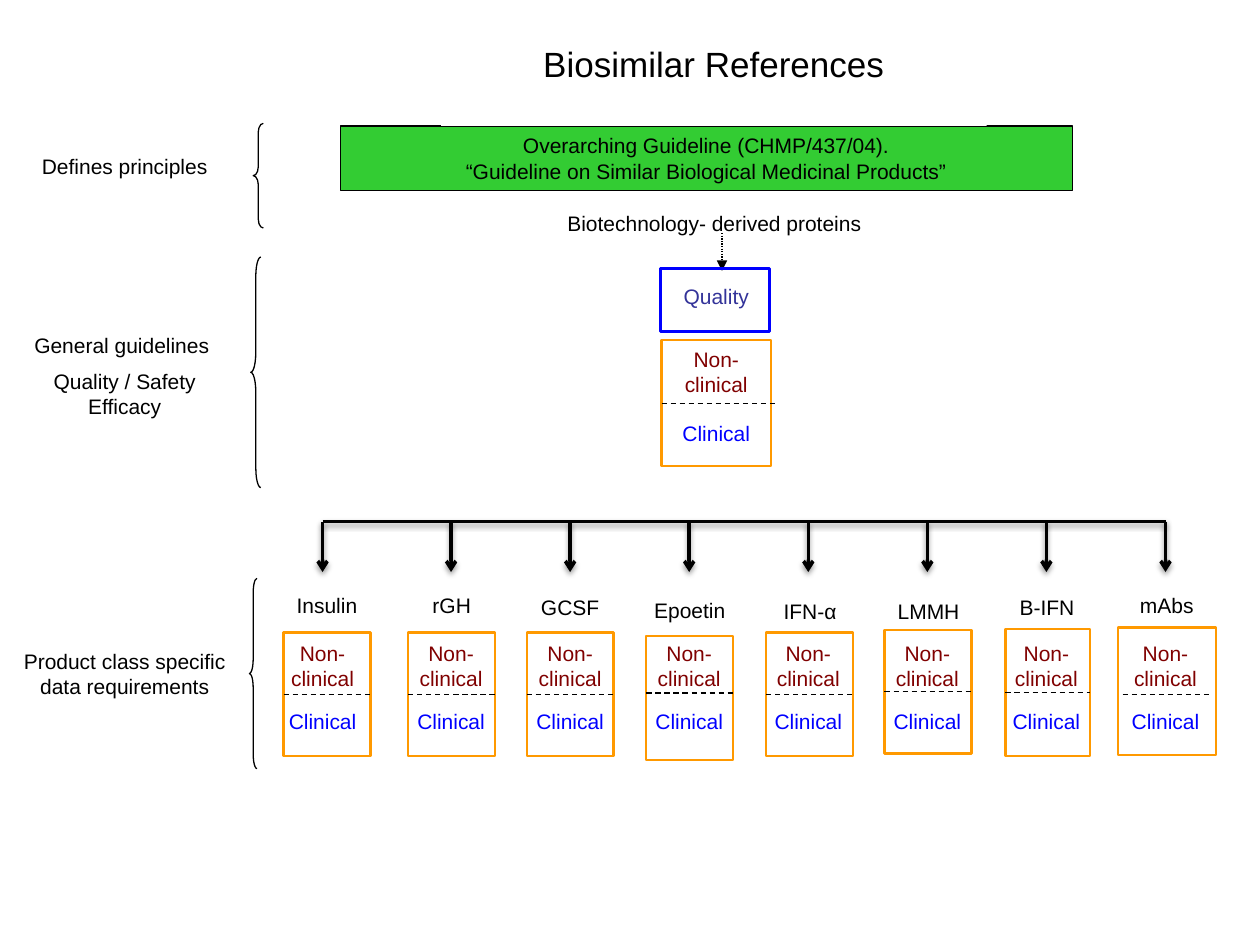
from lxml.etree import SubElement
from pptx import Presentation
from pptx.dml.color import RGBColor
from pptx.enum.dml import MSO_LINE
from pptx.enum.shapes import MSO_CONNECTOR, MSO_SHAPE
from pptx.enum.text import MSO_ANCHOR, MSO_AUTO_SIZE, PP_ALIGN
from pptx.oxml.ns import qn
from pptx.util import Inches, Pt

COLORS = {
    "black": "000000", "white": "FFFFFF", "green": "33CC33", "blue": "0000FF",
    "navy": "333399", "maroon": "800000", "orange": "FF9900",
}
FRAME = {"word_wrap": True, "auto_size": MSO_AUTO_SIZE.SHAPE_TO_FIT_TEXT,
         "vertical_anchor": MSO_ANCHOR.MIDDLE}
LABEL = {**FRAME, "word_wrap": False}
NOTE = {**FRAME, "vertical_anchor": MSO_ANCHOR.TOP}
TITLE = {**NOTE, "auto_size": MSO_AUTO_SIZE.NONE}

STEP = 0.945
CLASSES = [
    ("Insulin", 2.25, 4.65, 0.69, (2.25, 5.02, 0.69, 0.98), 2.25, 5.5),
    ("rGH", 3.33, 4.65, 0.51, (3.24, 5.02, 0.69, 0.98), 3.24, 5.51),
    ("GCSF", 4.19, 4.67, 0.67, (4.18, 5.02, 0.69, 0.98), 4.18, 5.5),
    ("Epoetin", 5.09, 4.69, 0.77, (5.13, 5.05, 0.69, 0.98), 5.13, 5.5),
    ("IFN-α", 6.11, 4.7, 0.64, (6.08, 5.02, 0.69, 0.98), 6.08, 5.5),
    ("LMMH", 7.02, 4.7, 0.7, (7.02, 5, 0.69, 0.98), 7.02, 5.49),
    ("B-IFN", 7.99, 4.67, 0.64, (7.98, 4.99, 0.67, 1.01), 7.97, 5.5),
    ("mAbs", 8.94, 4.65, 0.64, (8.87, 4.98, 0.78, 1.01), 8.91, 5.51),
]


def tint(name):
    return RGBColor.from_string(COLORS[name])


def apply(obj, style):
    for key, value in style.items():
        setattr(obj, key, value)


def write(shape, lines, color="black", frame=FRAME, size=12, before=0):
    apply(shape.text_frame, frame)
    shape.text_frame.text = "\n".join(lines)
    for par in shape.text_frame.paragraphs:
        apply(par, {"alignment": PP_ALIGN.CENTER, "space_before": Pt(before)})
        apply(par.runs[0].font, {"name": "Arial", "size": Pt(size)})
        par.runs[0].font.color.rgb = tint(color)


def add_text(slide, place, *lines, **style):
    box = slide.shapes.add_textbox(*map(Inches, place))
    write(box, lines, **style)


def add_form(slide, kind, place, color, width, fill=None):
    form = slide.shapes.add_shape(kind, *map(Inches, place))
    form.shadow.inherit = False
    form.line.color.rgb = tint(color)
    form.line.width = Pt(width)
    if fill:
        form.fill.solid()
        form.fill.fore_color.rgb = tint(fill)
    else:
        form.fill.background()
    return form


def add_brace(slide, place, bend):
    brace = add_form(slide, MSO_SHAPE.LEFT_BRACE, place, "black", 0.75)
    brace.adjustments[0] = bend


def add_line(slide, start, end, width=0.75, dash=None, head=None, shade=False):
    line = slide.shapes.add_connector(
        MSO_CONNECTOR.STRAIGHT, *map(Inches, (*start, *end)))
    line.line.color.rgb = tint("black")
    apply(line.line, {"width": Pt(width), "dash_style": dash})
    props = line.element.spPr
    if head:
        SubElement(props.find(qn("a:ln")), qn("a:tailEnd"), type=head)
    effects = SubElement(props, qn("a:effectLst"))
    if shade:
        cast = SubElement(effects, qn("a:outerShdw"), blurRad=str(Pt(3.1)),
                          dist=str(Pt(1.6)), dir="5400000", rotWithShape="0")
        color = SubElement(cast, qn("a:srgbClr"), val=COLORS["black"])
        SubElement(color, qn("a:alpha"), val="38000")
    return line


def add_split(slide, place, width, left, right, cut):
    box = add_form(slide, MSO_SHAPE.RECTANGLE, place, "orange", width)
    line = add_line(slide, (left, cut), (right, cut), dash=MSO_LINE.DASH)
    x, y, wide, high = place
    if abs(y + high / 2 - cut) < 0.02:
        if abs(x - left) < 0.02:
            line.begin_connect(box, 1)
        if abs(x + wide - right) < 0.02:
            line.end_connect(box, 3)


def add_stages(slide, left, width, top, high, low):
    add_text(slide, (left, top, width, high), "Non-clinical", color="maroon")
    add_text(slide, (left, low, width, 0.3), "Clinical", color="blue")


def add_title(slide):
    title = slide.shapes.title
    names = ("left", "top", "width", "height")
    apply(title, dict(zip(names, map(Inches, (3.5, 0.29, 4.33, 0.71)))))
    title.fill.solid()
    title.fill.fore_color.rgb = tint("white")
    write(title, ["Biosimilar References"], frame=TITLE, size=20)
    title.element.getparent().append(title.element)


def add_notes(slide):
    notes = [
        (1.17, 0.3, ["Defines principles"]),
        (2.59, 0.8, ["General guidelines ", "Quality / Safety Efficacy"]),
        (5.1, 0.7, ["Product class specific data requirements"]),
    ]
    for top, high, lines in notes:
        add_text(slide, (0.08, top, 1.82, high), *lines, frame=NOTE, before=6)
    add_brace(slide, (2.01, 0.98, 0.08, 0.83), 0.87)
    add_brace(slide, (1.99, 2.04, 0.08, 1.83), 1.913)
    add_brace(slide, (1.98, 4.59, 0.06, 1.51), 1.903)


def add_general(slide):
    banner = add_form(slide, MSO_SHAPE.RECTANGLE, (2.7, 1, 5.81, 0.51),
                      "black", 0.75, "green")
    write(banner, ["Overarching Guideline (CHMP/437/04).",
                   "“Guideline on Similar Biological Medicinal Products”"])
    add_text(slide, (4.16, 1.62, 3.02, 0.3), "Biotechnology- derived proteins")
    add_line(slide, (5.73, 1.85), (5.73, 2.15),
             dash=MSO_LINE.ROUND_DOT, head="triangle")
    add_form(slide, MSO_SHAPE.RECTANGLE, (5.24, 2.13, 0.87, 0.5), "blue", 1.5)
    add_text(slide, (5.17, 2.2, 1.03, 0.3), "Quality", color="navy")
    add_split(slide, (5.25, 2.7, 0.87, 1), 1.5, 5.25, 6.15, 3.2)
    add_stages(slide, 5.17, 1.03, 2.7, 0.5, 3.29)


def add_classes(slide):
    mids = [2.56] + [3.58 + STEP * i for i in range(len(CLASSES) - 1)]
    add_line(slide, (mids[0], 4.14), (mids[-1], 4.14), 2, shade=True)
    for mid, (name, left, top, wide, box, start, cut) in zip(mids, CLASSES):
        add_line(slide, (mid, 4.14), (mid, 4.54), 2, head="arrow", shade=True)
        add_text(slide, (left, top, wide, 0.3), name, frame=LABEL)
        add_split(slide, box, 1.25, start, start + 0.69, cut)
        add_stages(slide, mid - 0.39, 0.78, 5.03, 0.51, 5.57)


def main():
    deck = Presentation()
    apply(deck, {"slide_width": Inches(10), "slide_height": Inches(7.5)})
    slide = deck.slides.add_slide(deck.slide_layouts[5])
    add_general(slide)
    add_title(slide)
    add_notes(slide)
    add_classes(slide)
    deck.save("out.pptx")


if __name__ == "__main__":
    main()
